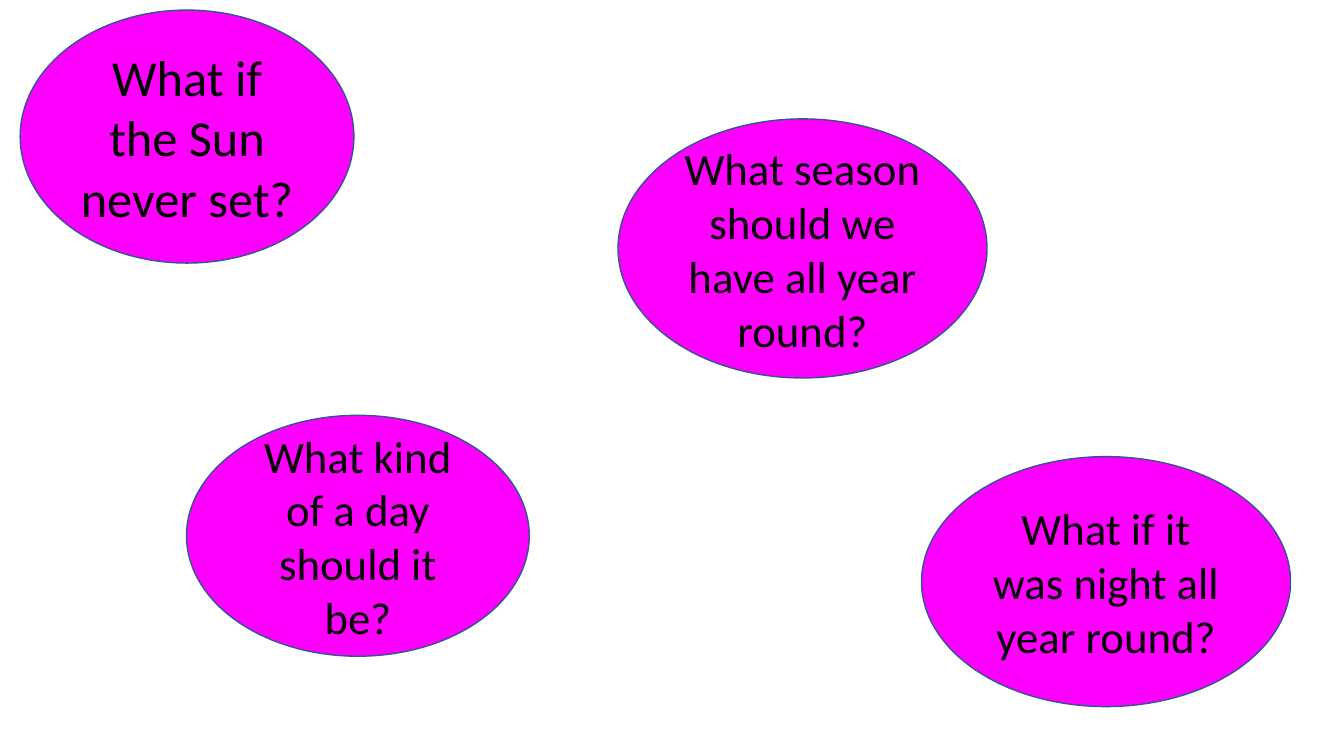
from pptx import Presentation
from pptx.dml.color import RGBColor
from pptx.enum.shapes import MSO_SHAPE
from pptx.enum.text import MSO_ANCHOR, PP_ALIGN
from pptx.util import Inches, Pt

# question, (left, top, width, height) in inches, text size in points
QUESTIONS = [
    ("What kind of a day should it be?", (1.85, 4.12, 3.4, 2.39), 32),
    ("What season should we have all year round?", (6.13, 1.18, 3.66, 2.57), 32),
    ("What if the Sun never set?", (0.2, 0.1, 3.31, 2.51), 36),
    ("What if it was night all year round?", (9.14, 4.53, 3.66, 2.48), 32),
]
BUBBLE_FILL = "FF00FF"
BUBBLE_LINE = "325491"
TEXT_COLOR = "000000"


def rgb(color):
    return RGBColor.from_string(color)


def write_text(frame, text, *, size, color=TEXT_COLOR, font="Calibri"):
    frame.word_wrap = True
    frame.vertical_anchor = MSO_ANCHOR.MIDDLE
    paragraph = frame.paragraphs[0]
    paragraph.alignment = PP_ALIGN.CENTER
    run = paragraph.add_run()
    run.text = text
    run.font.name = font
    run.font.size = Pt(size)
    run.font.color.rgb = rgb(color)


def add_bubble(slide, question, box, size):
    bubble = slide.shapes.add_shape(MSO_SHAPE.OVAL, *map(Inches, box))
    bubble.shadow.inherit = False
    bubble.fill.solid()
    bubble.fill.fore_color.rgb = rgb(BUBBLE_FILL)
    bubble.line.color.rgb = rgb(BUBBLE_LINE)
    bubble.line.width = Pt(1)
    write_text(bubble.text_frame, question, size=size)


def main():
    deck = Presentation()
    deck.slide_width = Inches(13.33)
    deck.slide_height = Inches(7.5)
    slide = deck.slides.add_slide(deck.slide_layouts.get_by_name("Blank"))
    for question, box, size in QUESTIONS:
        add_bubble(slide, question, box, size)
    deck.save("out.pptx")


if __name__ == "__main__":
    main()
